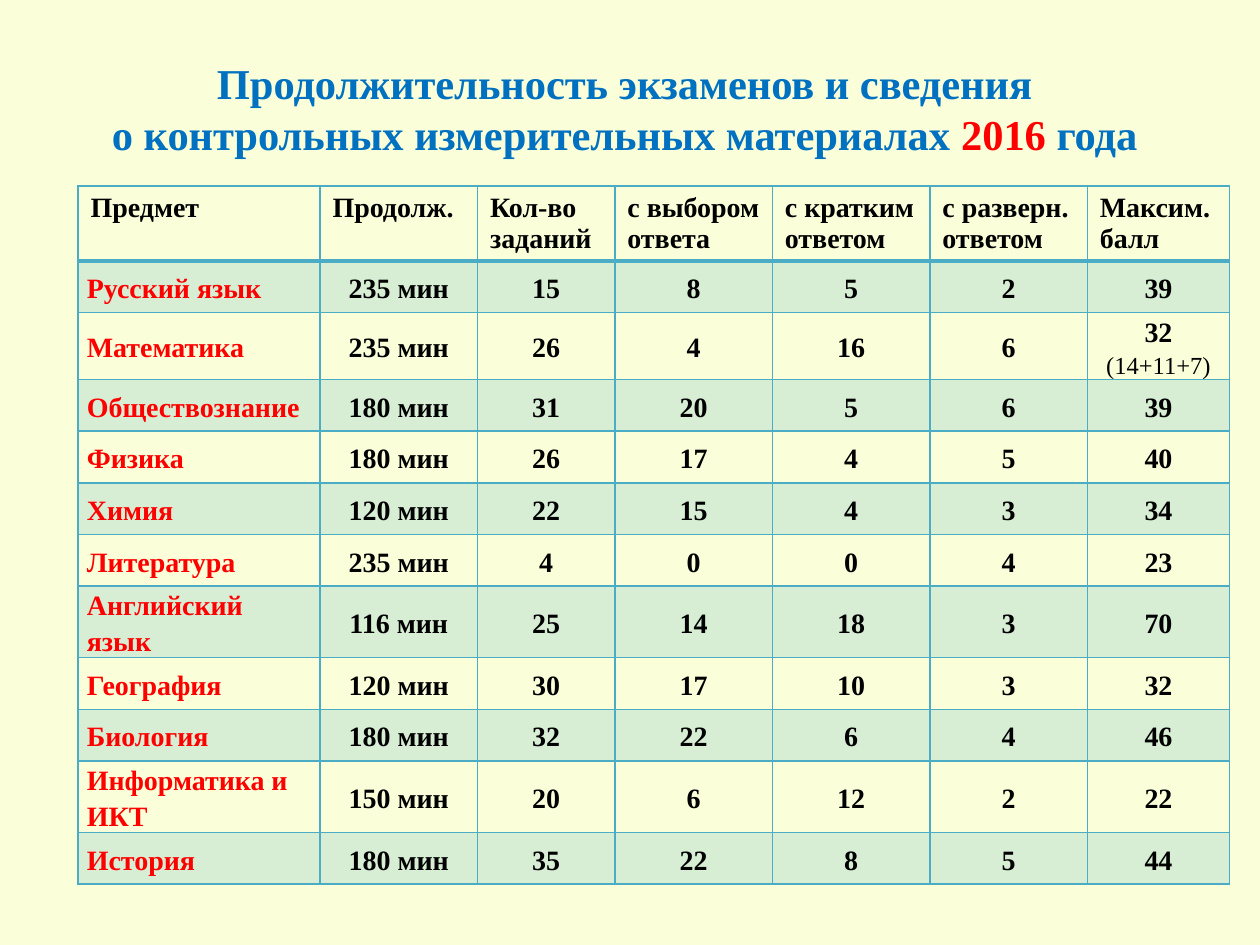
from lxml.etree import SubElement
from pptx import Presentation
from pptx.dml.color import RGBColor
from pptx.enum.text import MSO_ANCHOR, MSO_AUTO_SIZE, PP_ALIGN
from pptx.oxml.ns import qn
from pptx.util import Inches, Pt

CREAM = RGBColor(0xFA, 0xFF, 0xD9)
BLUE = RGBColor(0x00, 0x70, 0xC0)
RED = RGBColor(0xFF, 0x00, 0x00)
BLACK = RGBColor(0x00, 0x00, 0x00)
TEAL = RGBColor(0x4B, 0xAC, 0xC6)

FONT = "Times New Roman"
SLIDE_WIDTH, SLIDE_HEIGHT = Inches(10), Inches(7.5)
TITLE_BOX = (0.05, 0.04, 0.9, 0.148)
TABLE_BOX = (0.062, 0.197, 0.914, 0.68)
COLUMN_WEIGHTS = (1.92, 1.25, 1.09, 1.25, 1.25, 1.25, 1.13)
HEADER_HEIGHT, ROW_HEIGHT = Inches(0.59), Inches(0.41)

HEADINGS = ("Предмет", "Продолж.", "Кол-во заданий", "с выбором ответа",
            "с кратким ответом", "с разверн. ответом", "Максим.балл")
EXAMS = (
    ("Русский язык", 235, 15, 8, 5, 2, 39),
    ("Математика", 235, 26, 4, 16, 6, 32),
    ("Обществознание", 180, 31, 20, 5, 6, 39),
    ("Физика", 180, 26, 17, 4, 5, 40),
    ("Химия", 120, 22, 15, 4, 3, 34),
    ("Литература", 235, 4, 0, 0, 4, 23),
    ("Английский язык", 116, 25, 14, 18, 3, 70),
    ("География", 120, 30, 17, 10, 3, 32),
    ("Биология", 180, 32, 22, 6, 4, 46),
    ("Информатика и ИКТ", 150, 20, 6, 12, 2, 22),
    ("История", 180, 35, 22, 8, 5, 44),
)
SCORE_DETAILS = {"Математика": "(14+11+7)"}


def to_lengths(shares):
    left, top, width, height = shares
    return (round(left * SLIDE_WIDTH), round(top * SLIDE_HEIGHT),
            round(width * SLIDE_WIDTH), round(height * SLIDE_HEIGHT))


def write(paragraph, text, size=16, color=BLACK, bold=True):
    for index, line in enumerate(text.split("\n")):
        if index:
            paragraph.add_line_break()
        run = paragraph.add_run()
        run.text = line
        run.font.name = FONT
        run.font.size = Pt(size)
        run.font.bold = bold
        run.font.color.rgb = color


def draw_borders(cell, bottom=1):
    properties = cell._tc.get_or_add_tcPr()
    for side, points in (("L", 1), ("R", 1), ("T", 1), ("B", bottom)):
        border = SubElement(properties, qn(f"a:ln{side}"), w=str(Pt(points)))
        fill = SubElement(border, qn("a:solidFill"))
        SubElement(fill, qn("a:srgbClr"), val=str(TEAL))


def fill_cell(cell, shaded):
    if not shaded:
        cell.fill.background()
        return
    cell.fill.solid()
    cell.fill.fore_color.rgb = TEAL
    color = cell._tc.tcPr.find(qn("a:solidFill")).find(qn("a:srgbClr"))
    SubElement(color, qn("a:alpha"), val="20000")


def format_exam_cell(cell, align):
    cell.vertical_anchor = MSO_ANCHOR.MIDDLE
    cell.margin_left = cell.margin_right = Inches(0.07)
    cell.margin_top = cell.margin_bottom = 0
    paragraph = cell.text_frame.paragraphs[0]
    paragraph.alignment = align
    paragraph.line_spacing = 1.15
    paragraph.space_before = paragraph.space_after = Pt(6)
    return paragraph


def place_title(slide, box):
    title = slide.shapes.title
    title.left, title.top, title.width, title.height = box
    frame = title.text_frame
    frame.word_wrap = True
    frame.auto_size = MSO_AUTO_SIZE.NONE
    frame.vertical_anchor = MSO_ANCHOR.MIDDLE
    paragraph = frame.paragraphs[0]
    paragraph.alignment = PP_ALIGN.CENTER
    write(paragraph, "Продолжительность экзаменов и сведения \n"
          "о контрольных измерительных материалах ", size=24.3, color=BLUE)
    write(paragraph, "2016", size=24.3, color=RED)
    write(paragraph, " года ", size=24.3, color=BLUE)


def place_exam_table(slide, box):
    table = slide.shapes.add_table(len(EXAMS) + 1, len(HEADINGS), *box).table
    table.first_row = table.horz_banding = False
    for column, weight in zip(table.columns, COLUMN_WEIGHTS):
        column.width = round(box[2] * weight / sum(COLUMN_WEIGHTS))
    for index, row in enumerate(table.rows):
        row.height = ROW_HEIGHT if index else HEADER_HEIGHT

    for cell, heading in zip(table.rows[0].cells, HEADINGS):
        draw_borders(cell, bottom=2)
        fill_cell(cell, shaded=False)
        write(cell.text_frame.paragraphs[0], heading)

    for number, (subject, minutes, *counts) in enumerate(EXAMS, start=1):
        cells = list(table.rows[number].cells)
        values = (subject, f"{minutes} мин", *map(str, counts))
        for column, (cell, value) in enumerate(zip(cells, values)):
            draw_borders(cell)
            fill_cell(cell, shaded=number % 2 == 1)
            paragraph = format_exam_cell(
                cell, PP_ALIGN.CENTER if column else PP_ALIGN.LEFT)
            write(paragraph, value, color=BLACK if column else RED)
        if subject in SCORE_DETAILS:
            score = cells[-1].text_frame.paragraphs[0]
            score.runs[0].text += " "
            write(score, SCORE_DETAILS[subject], size=14, bold=False)


def main():
    presentation = Presentation()
    presentation.slide_width = SLIDE_WIDTH
    presentation.slide_height = SLIDE_HEIGHT
    slide = presentation.slides.add_slide(presentation.slide_layouts[5])
    slide.background.fill.solid()
    slide.background.fill.fore_color.rgb = CREAM
    place_title(slide, to_lengths(TITLE_BOX))
    place_exam_table(slide, to_lengths(TABLE_BOX))
    presentation.save("out.pptx")


if __name__ == "__main__":
    main()
